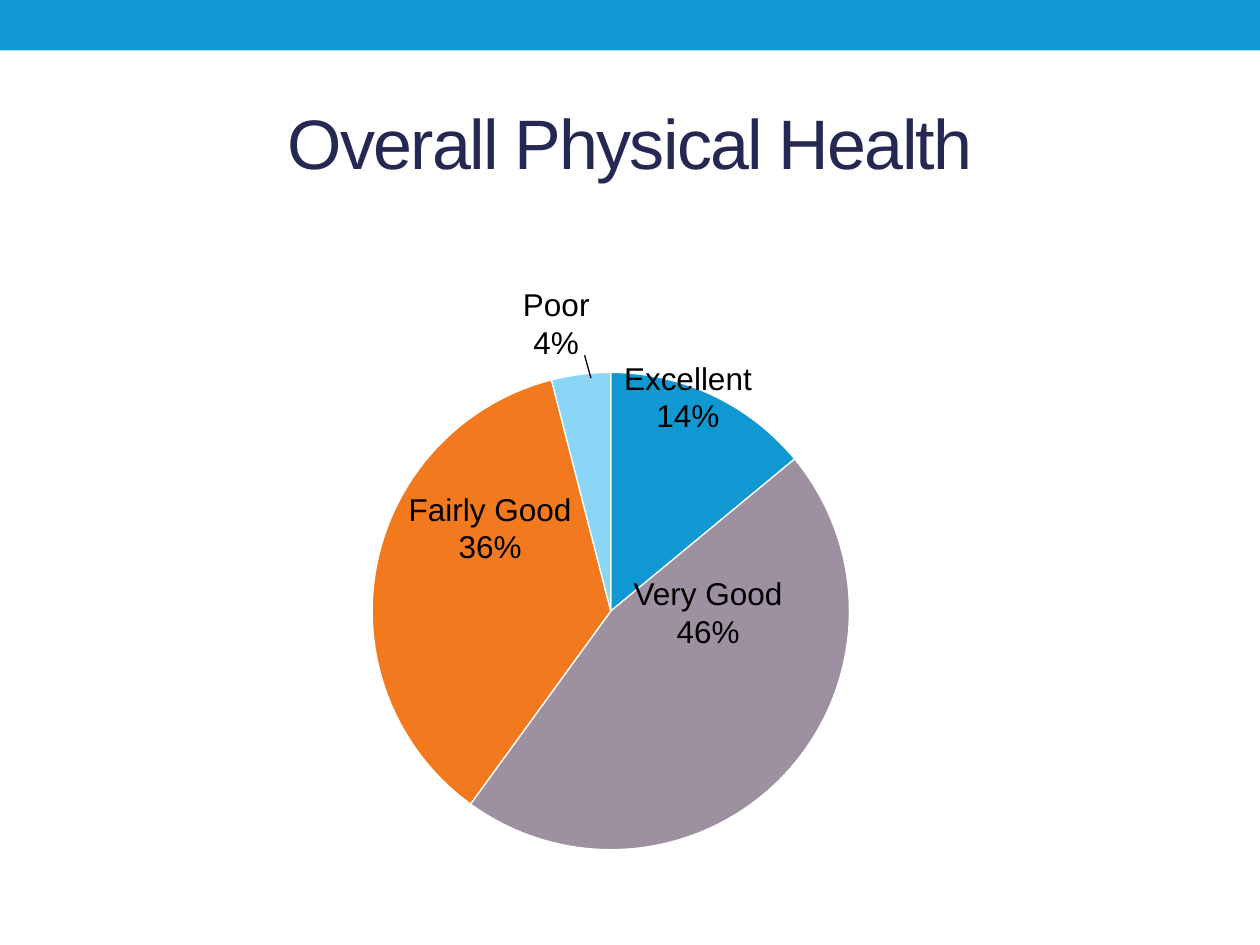
from lxml import etree
from pptx import Presentation
from pptx import util as u
from pptx.chart.data import CategoryChartData
from pptx.dml.color import RGBColor
from pptx.enum import chart as ch, shapes, text
from pptx.oxml import ns

Inches = u.Inches


def rgb(code):
    return RGBColor.from_string(code)


def write(words, left, top, width, height, size=18, color="000000", gap=None):
    box = slide.shapes.add_textbox(*map(Inches, (left, top, width, height)))
    frame = box.text_frame
    frame.word_wrap = True
    frame.vertical_anchor = text.MSO_ANCHOR.MIDDLE
    frame.text = words
    for para in frame.paragraphs:
        para.alignment = text.PP_ALIGN.CENTER
        run = para.runs[0]
        run.font.name = "Arial"
        run.font.size = u.Pt(size)
        run.font.color.rgb = rgb(color)
        if gap is not None:
            run.font._element.set("spc", str(gap))


deck = Presentation()
deck.slide_width, deck.slide_height = Inches(10), Inches(7.5)
slide = deck.slides.add_slide(deck.slide_layouts[6])

# Top band
band = slide.shapes.add_shape(
    shapes.MSO_SHAPE.RECTANGLE, 0, 0, Inches(10), Inches(0.4))
band.shadow.inherit = False
band.fill.solid()
band.fill.fore_color.rgb = rgb("1098D2")
band.line.fill.background()

# Title
write("Overall Physical Health", 0.5, 0.58, 9, 1.08,
      size=40, color="242852", gap=-100)

# Ratings: name, share, slice colour, label box
rates = [
    ("Excellent", 14, "1098D2", (4.75, 2.79, 1.42, 0.71)),
    ("Very Good", 46, "9D90A0", (4.83, 4.5, 1.58, 0.71)),
    ("Fairly Good", 36, "F2791E", (3.14, 3.83, 1.5, 0.71)),
    ("Poor", 4, "8BD6F6", (4, 2.21, 0.83, 0.71)),
]

# Pie chart
data = CategoryChartData()
data.categories = ["1", "2", "3", "4"]
data.add_series("Series 1", [rate[1] for rate in rates])
pie = slide.shapes.add_chart(
    ch.XL_CHART_TYPE.PIE, Inches(1.67), Inches(2.79),
    Inches(6.42), Inches(4.08), data).chart
pie.has_legend = False
pie.has_title = False
pie.font.name = "Arial"
pie.font.size = u.Pt(18)
pie.font.color.rgb = rgb("000000")
plot = pie.plots[0]
plot.vary_by_categories = False

# Fixed place for the pie, as shares of the chart frame
area = pie._chartSpace.find(".//" + ns.qn("c:plotArea"))
for old in area.findall(ns.qn("c:layout")):
    area.remove(old)
lay = etree.Element(ns.qn("c:layout"))
man = etree.SubElement(lay, ns.qn("c:manualLayout"))
for key, val in [("layoutTarget", "inner"), ("xMode", "edge"),
                 ("yMode", "edge"), ("x", "0.2"), ("y", "0.04"),
                 ("w", "0.59"), ("h", "0.93")]:
    etree.SubElement(man, ns.qn("c:" + key)).set("val", val)
area.insert(0, lay)

# Slice colours and labels
for i, (name, share, color, place) in enumerate(rates):
    part = plot.series[0].points[i].format
    part.fill.solid()
    part.fill.fore_color.rgb = rgb(color)
    part.line.color.rgb = rgb("FFFFFF")
    part.line.width = u.Pt(0.75)
    write(f"{name}\n{share}%", *place)

# Leader line to the smallest slice
lead = slide.shapes.add_connector(
    shapes.MSO_CONNECTOR.STRAIGHT,
    Inches(4.64), Inches(2.82), Inches(4.69), Inches(3))
lead.line.color.rgb = rgb("000000")
lead.line.width = u.Pt(0.75)
etree.SubElement(lead._element.spPr, ns.qn("a:effectLst"))

deck.save("out.pptx")
